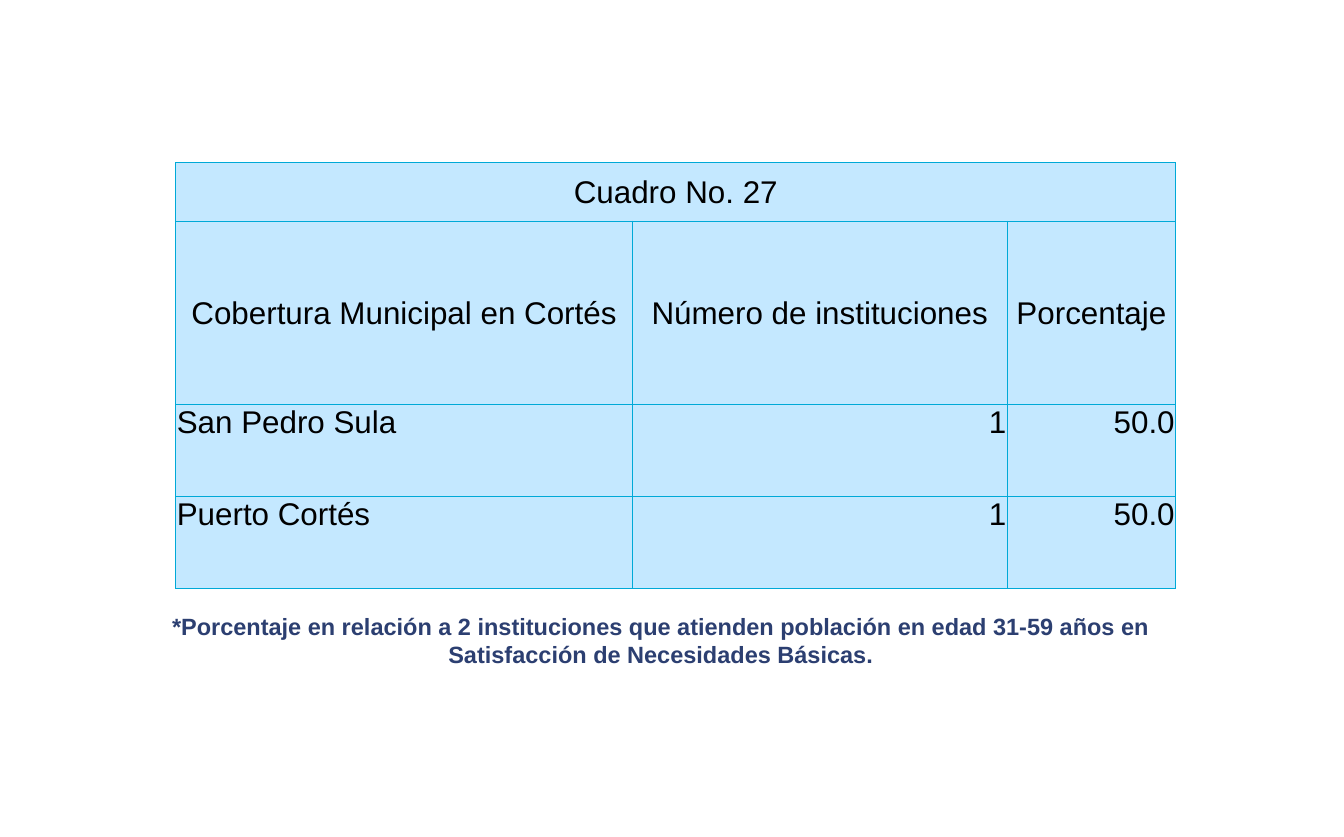
from lxml import etree
from pptx import Presentation
from pptx.dml.color import RGBColor
from pptx.enum import text
from pptx.oxml import ns
from pptx.util import Inches, Pt

COLORS = {"cell": "C4E8FF", "border": "00A9D7", "text": "000000", "note": "2C3F71"}
ALIGN = text.PP_ALIGN
COL_WIDTHS = [4.85, 3.99, 1.79]
ROW_HEIGHTS = [0.62, 1.95, 0.98, 0.98]
ROWS = [
    ["Cuadro No. 27", "", ""],
    ["Cobertura Municipal en Cortés", "Número de instituciones", "Porcentaje"],
    ["San Pedro Sula", "1", "50.0"],
    ["Puerto Cortés", "1", "50.0"],
]
HEADER_ROWS = 2


def style_font(font, size, color, bold=False):
    font.name, font.size, font.bold = "Arial", Pt(size), bold
    font.color.rgb = RGBColor.from_string(COLORS[color])


def add_borders(cell):
    tc_pr = cell._tc.get_or_add_tcPr()
    for side in ("lnL", "lnR", "lnT", "lnB"):
        line = etree.SubElement(tc_pr, ns.qn(f"a:{side}"), w=str(Pt(0.75)))
        fill = etree.SubElement(line, ns.qn("a:solidFill"))
        etree.SubElement(fill, ns.qn("a:srgbClr"), val=COLORS["border"])


prs = Presentation()
prs.slide_width, prs.slide_height = Inches(14.29), Inches(8.9)
s = prs.slides.add_slide(prs.slide_layouts[6])

# Coverage table
table = s.shapes.add_table(
    len(ROWS), len(COL_WIDTHS), Inches(1.87), Inches(1.73),
    Inches(sum(COL_WIDTHS)), Inches(sum(ROW_HEIGHTS))).table
table.first_row = table.horz_banding = False
for column, width in zip(table.columns, COL_WIDTHS):
    column.width = Inches(width)
for row, height in zip(table.rows, ROW_HEIGHTS):
    row.height = Inches(height)
table.cell(0, 0).merge(table.cell(0, len(COL_WIDTHS) - 1))

for i, values in enumerate(ROWS):
    for j, value in enumerate(values):
        cell = table.cell(i, j)
        add_borders(cell)
        cell.fill.solid()
        cell.fill.fore_color.rgb = RGBColor.from_string(COLORS["cell"])
        cell.margin_left = cell.margin_right = cell.margin_top = Inches(0.01)
        cell.margin_bottom = 0
        cell.text_frame.text = value
        p = cell.text_frame.paragraphs[0]
        if i < HEADER_ROWS:
            cell.vertical_anchor = text.MSO_ANCHOR.MIDDLE
            p.alignment = ALIGN.CENTER
        else:
            cell.vertical_anchor = text.MSO_ANCHOR.TOP
            p.alignment = ALIGN.RIGHT if j else ALIGN.LEFT
        for r in p.runs:
            style_font(r.font, 24, "text")

# Note below the table
tf = s.shapes.add_textbox(Inches(1.08), Inches(6.46), Inches(11.89), Inches(0.71)).text_frame
tf.word_wrap = True
tf.auto_size = text.MSO_AUTO_SIZE.SHAPE_TO_FIT_TEXT
tf.text = ("*Porcentaje en relación a 2 instituciones que atienden población "
           "en edad 31-59 años en Satisfacción de Necesidades Básicas.")
p = tf.paragraphs[0]
p.alignment = ALIGN.CENTER
style_font(p.runs[0].font, 18, "note", bold=True)

prs.save("out.pptx")
